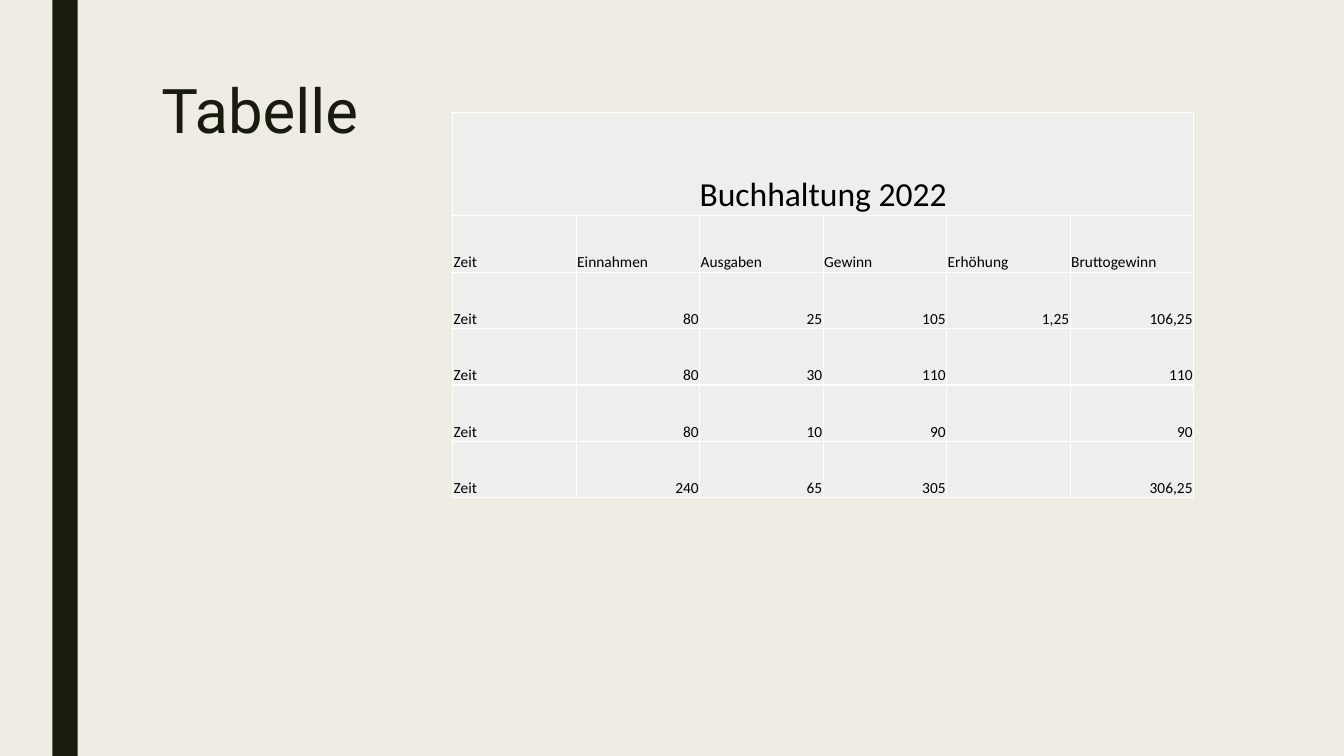
from lxml import etree
from pptx import Presentation
from pptx.dml.color import RGBColor
from pptx.enum.shapes import MSO_SHAPE
from pptx.enum.text import MSO_ANCHOR, PP_ALIGN
from pptx.oxml import parse_xml
from pptx.util import Inches, Pt

RECT = MSO_SHAPE.RECTANGLE
TOP, BOTTOM = MSO_ANCHOR.TOP, MSO_ANCHOR.BOTTOM
LEFT, CENTER, RIGHT = PP_ALIGN.LEFT, PP_ALIGN.CENTER, PP_ALIGN.RIGHT
NS = "http://schemas.openxmlformats.org/drawingml/2006/main"
DARK, CREAM, GREY, WHITE, BLACK = "191B0E", "EFEDE3", "EEEEED", "FFFFFF", "000000"


def rgb(value):
    return RGBColor.from_string(value)


def write(p, text, size, font, color, align):
    p.alignment = align
    r = p.add_run()
    r.text = text
    for name, value in {"size": Pt(size), "name": font}.items():
        setattr(r.font, name, value)
    r.font.color.rgb = rgb(color)


prs = Presentation()
prs.slide_width, prs.slide_height = Inches(13.33), Inches(7.5)
slide = prs.slides.add_slide(prs.slide_layouts[5])
slide.background.fill.solid()
slide.background.fill.fore_color.rgb = rgb(CREAM)

bar = slide.shapes.add_shape(RECT, Inches(0.52), 0, Inches(0.25), prs.slide_height)
bar.shadow.inherit = False
bar.fill.solid()
bar.fill.fore_color.rgb = rgb(DARK)
bar.line.fill.background()

title = slide.shapes.title
box = {"left": 1.5, "top": 0.75, "width": 10.5, "height": 1.62}
for name, value in box.items():
    setattr(title, name, Inches(value))
tf = title.text_frame
tf.vertical_anchor = TOP
p = tf.paragraphs[0]
p.line_spacing = 0.89
write(p, "Tabelle", 44, "Roboto", DARK, LEFT)

rows = [
    ["Buchhaltung 2022", "", "", "", "", ""],
    ["Zeit", "Einnahmen", "Ausgaben", "Gewinn", "Erhöhung", "Bruttogewinn"],
    ["Zeit", "80", "25", "105", "1,25", "106,25"],
    ["Zeit", "80", "30", "110", "", "110"],
    ["Zeit", "80", "10", "90", "", "90"],
    ["Zeit", "240", "65", "305", "", "306,25"],
]
heights = [1.02] + [0.56] * 5
cell_format = {
    "margin_left": Inches(0.01),
    "margin_right": Inches(0.01),
    "margin_top": Inches(0.01),
    "margin_bottom": 0,
    "vertical_anchor": BOTTOM,
}
frame = slide.shapes.add_table(
    len(rows), len(rows[0]), Inches(4.49), Inches(1.12), Inches(7.35), Inches(sum(heights))
)
table = frame.table
table.first_row = table.horz_banding = False
table.cell(0, 0).merge(table.cell(0, len(rows[0]) - 1))

for i, (row, height) in enumerate(zip(rows, heights)):
    table.rows[i].height = Inches(height)
    for j, text in enumerate(row):
        cell = table.cell(i, j)
        for name, value in cell_format.items():
            setattr(cell, name, value)
        tcPr = cell._tc.get_or_add_tcPr()
        for side in ("lnL", "lnR", "lnT", "lnB"):
            ln = parse_xml(f'<a:{side} xmlns:a="{NS}" w="{Pt(1)}"/>')
            fill = etree.SubElement(ln, f"{{{NS}}}solidFill")
            etree.SubElement(fill, f"{{{NS}}}srgbClr", val=WHITE)
            tcPr.append(ln)
        cell.fill.solid()
        cell.fill.fore_color.rgb = rgb(GREY)
        if text:
            align = CENTER if i == 0 else RIGHT if i > 1 and j > 0 else LEFT
            size = 24 if i == 0 else 11
            write(cell.text_frame.paragraphs[0], text, size, "Calibri", BLACK, align)

prs.save("out.pptx")
